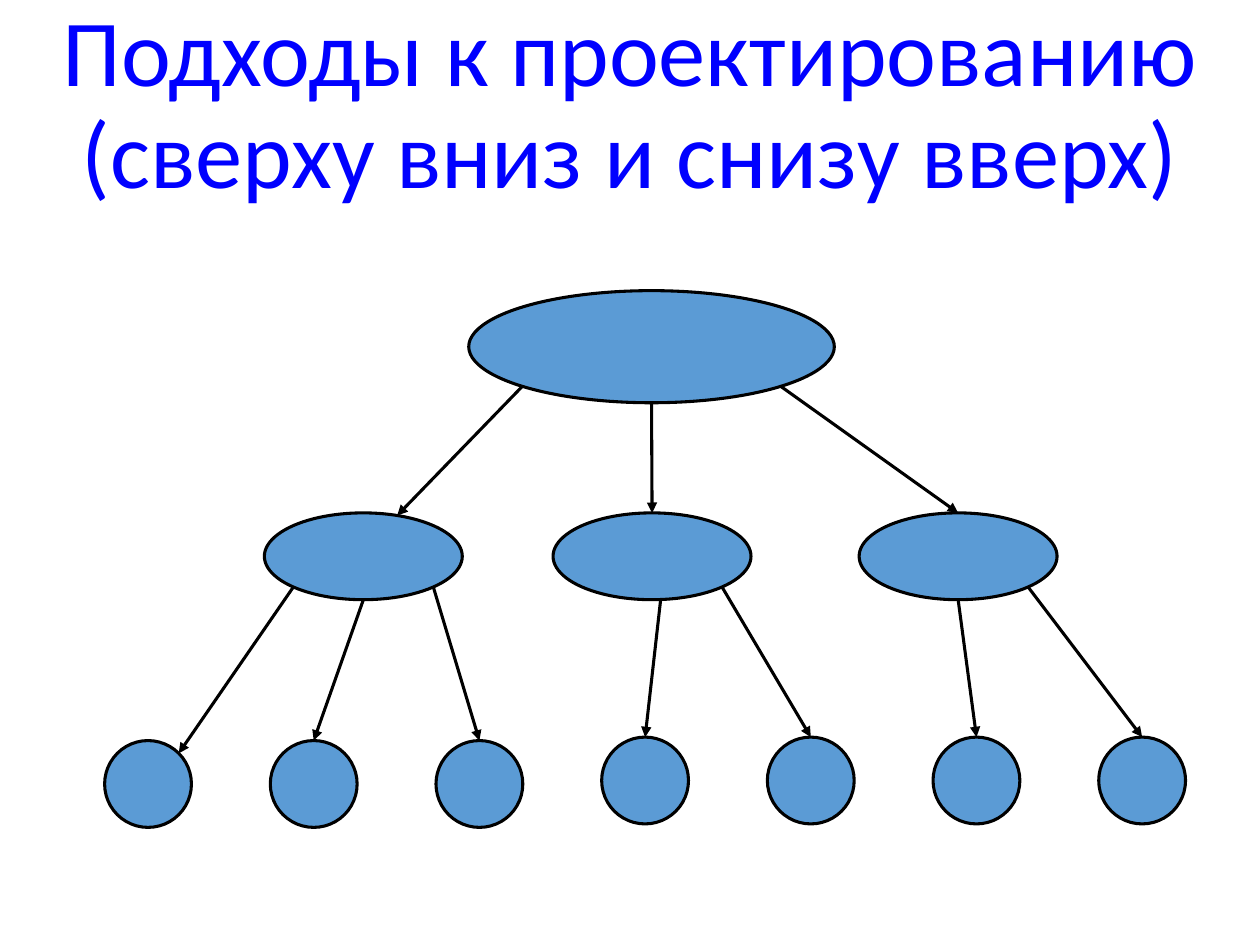
import math

import pptx
import pptx.dml.color
import pptx.enum.shapes
import pptx.enum.text
import pptx.oxml
import pptx.oxml.ns
import pptx.util

Cm = pptx.util.Cm
Pt = pptx.util.Pt

# Angles on an ellipse, in degrees clockwise from the right
LOWER_RIGHT, BOTTOM, LOWER_LEFT, TOP, UPPER_RIGHT = 45, 90, 135, 270, 315


def color(hex_string):
    return pptx.dml.color.RGBColor.from_string(hex_string)


def write_text(shape, text, *, font, size, fill, align, line_spacing):
    paragraph = shape.text_frame.paragraphs[0]
    paragraph.alignment = align
    paragraph.line_spacing = line_spacing
    run = paragraph.add_run()
    run.text = text
    run.font.name = font
    run.font.size = Pt(size)
    run.font.color.rgb = color(fill)


def rim_point(ellipse, angle):
    """Return the point of the ellipse's outline at the given angle."""
    radians = math.radians(angle)
    x = ellipse.left + ellipse.width / 2 * (1 + math.cos(radians))
    y = ellipse.top + ellipse.height / 2 * (1 + math.sin(radians))
    return round(x), round(y)


class TreeSlide:
    """Holds the style and the slide being drawn."""

    font = "Calibri"
    title_color = "0000FF"
    node_color = "5B9BD5"
    line_color = "000000"
    line_width = 1.75

    def __init__(self, presentation):
        self.slide = presentation.slides.add_slide(presentation.slide_layouts[0])
        subtitle = self.slide.placeholders[1].element
        subtitle.getparent().remove(subtitle)

    def title(self, text, left, top, width, height):
        shape = self.slide.shapes.title
        shape.left, shape.top = Cm(left), Cm(top)
        shape.width, shape.height = Cm(width), Cm(height)
        frame = shape.text_frame
        frame.word_wrap = True
        frame.auto_size = pptx.enum.text.MSO_AUTO_SIZE.NONE
        frame.vertical_anchor = pptx.enum.text.MSO_ANCHOR.BOTTOM
        write_text(shape, text, font=self.font, size=54, fill=self.title_color,
                   align=pptx.enum.text.PP_ALIGN.CENTER, line_spacing=0.9)

    def outline(self, line):
        line.color.rgb = color(self.line_color)
        line.width = Pt(self.line_width)

    def node(self, left, top, width, height):
        shape = self.slide.shapes.add_shape(
            pptx.enum.shapes.MSO_SHAPE.OVAL,
            Cm(left), Cm(top), Cm(width), Cm(height))
        shape.shadow.inherit = False
        shape.fill.solid()
        shape.fill.fore_color.rgb = color(self.node_color)
        self.outline(shape.line)
        return shape

    def arrow(self, parent, start_angle, child, end_angle=TOP):
        connector = self.slide.shapes.add_connector(
            pptx.enum.shapes.MSO_CONNECTOR.STRAIGHT,
            *rim_point(parent, start_angle), *rim_point(child, end_angle))
        if end_angle == TOP:
            connector.end_connect(child, 0)
        self.outline(connector.line)
        namespace = pptx.oxml.ns.nsdecls("a")
        connector.line._get_or_add_ln().append(
            pptx.oxml.parse_xml(f'<a:tailEnd {namespace} type="triangle"/>'))
        connector._element.spPr.append(
            pptx.oxml.parse_xml(f"<a:effectLst {namespace}/>"))


def main():
    presentation = pptx.Presentation()
    presentation.slide_width, presentation.slide_height = Cm(25.4), Cm(19.05)
    tree = TreeSlide(presentation)
    tree.title("Подходы к проектированию (сверху вниз и снизу вверх)",
               0, 0.3, 25.4, 4.04)

    root = tree.node(9.45, 5.86, 7.37, 2.26)
    branches = [tree.node(left, 10.34, 3.99, 1.75)
                for left in (5.33, 11.15, 17.32)]
    # The three leaves of the first branch sit slightly lower
    leaves = [tree.node(2.11 + 3.34 * index, 14.93 if index < 3 else 14.86,
                        1.75, 1.75)
              for index in range(7)]

    left_branch, middle_branch, right_branch = branches
    tree.arrow(root, LOWER_LEFT, left_branch, 290)
    tree.arrow(root, BOTTOM, middle_branch)
    tree.arrow(root, LOWER_RIGHT, right_branch)

    tree.arrow(left_branch, LOWER_LEFT, leaves[0], UPPER_RIGHT)
    leaf_links = [
        (left_branch, BOTTOM), (left_branch, LOWER_RIGHT),
        (middle_branch, 85), (middle_branch, LOWER_RIGHT),
        (right_branch, BOTTOM), (right_branch, LOWER_RIGHT),
    ]
    for (branch, angle), leaf in zip(leaf_links, leaves[1:]):
        tree.arrow(branch, angle, leaf)

    presentation.save("out.pptx")


if __name__ == "__main__":
    main()
